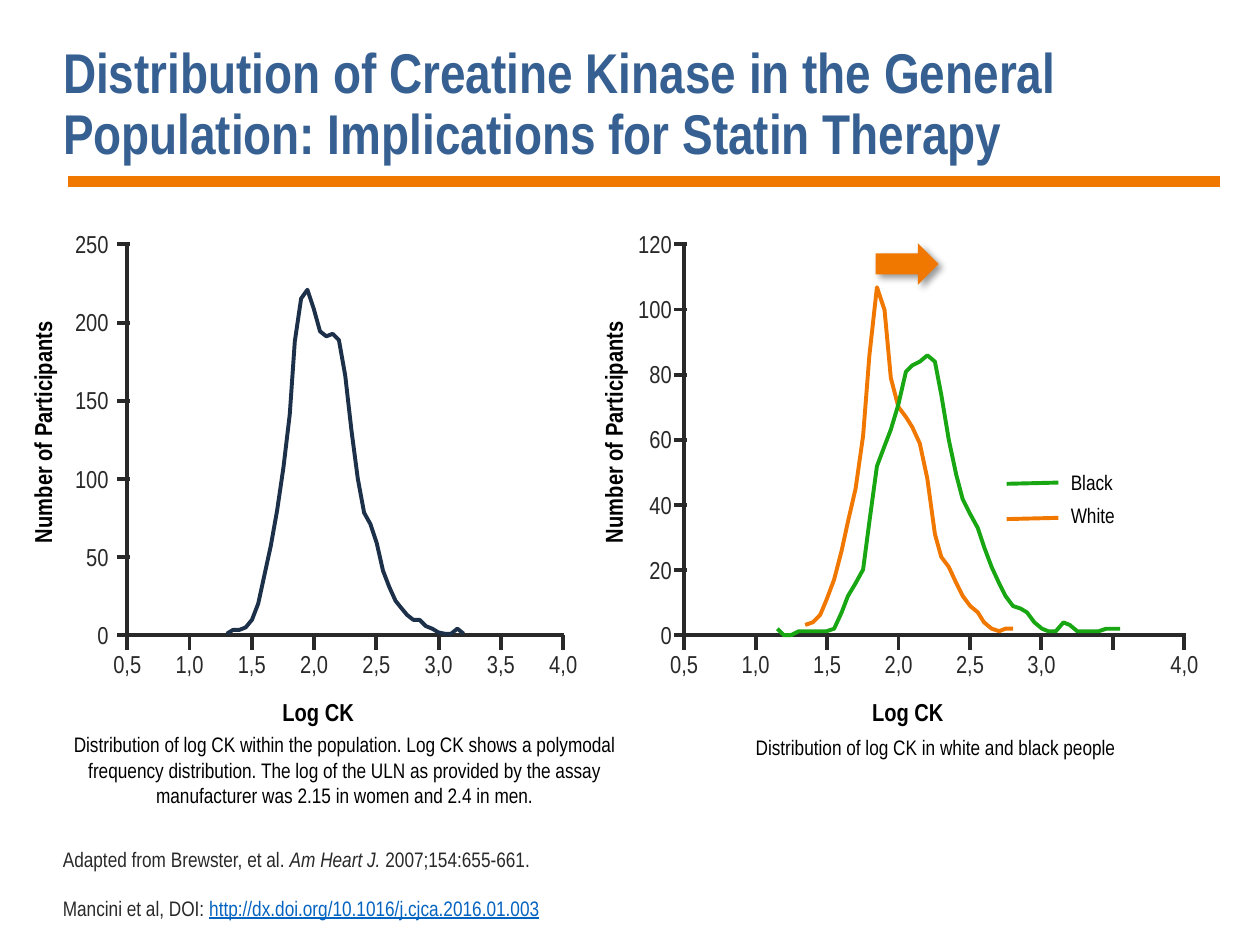
"""Builds a slide with creatine kinase distribution curves in two panels."""
from lxml import etree
from pptx import Presentation
from pptx.dml.color import RGBColor
from pptx.enum.shapes import MSO_CONNECTOR, MSO_SHAPE
from pptx.enum.text import MSO_ANCHOR, MSO_AUTO_SIZE, PP_ALIGN
from pptx.oxml.ns import qn
from pptx.util import Pt

STRAIGHT = MSO_CONNECTOR.STRAIGHT
RIGHT_ARROW = MSO_SHAPE.RIGHT_ARROW
BOTTOM = MSO_ANCHOR.BOTTOM
NO_FIT = MSO_AUTO_SIZE.NONE
LEFT, CENTER, RIGHT = PP_ALIGN.LEFT, PP_ALIGN.CENTER, PP_ALIGN.RIGHT
FONT = "Arial Narrow"
ORANGE = RGBColor(0xF1, 0x78, 0x00)
GREEN = RGBColor(0x18, 0xA7, 0x13)
NAVY = RGBColor(0x1C, 0x30, 0x49)
BLUE = RGBColor(0x37, 0x60, 0x92)
LINK = RGBColor(0x05, 0x63, 0xC1)
INK = RGBColor(0x28, 0x29, 0x28)
BLACK = RGBColor(0, 0, 0)

PX = 9144
AXIS_TOP, AXIS_BOTTOM = 194, 504
TICK_OUT, TICK_IN, TICK_DOWN = 8, 2, 12
LABEL_WIDTH, LABEL_HEIGHT = 59, 34
LOG_MIN, LOG_MAX, LOG_TICK = 0.5, 4.0, 0.5
LOG_SAMPLE = 0.05

prs = Presentation()
prs.slide_width, prs.slide_height = 1000 * PX, 750 * PX
slide = prs.slides.add_slide(prs.slide_layouts[5])
shapes = slide.shapes


def add_text(words, left, top, width, height, align=CENTER, size=14, color=BLACK, bold=False):
    box = shapes.add_textbox(*(int(length * PX) for length in (left, top, width, height)))
    box.text_frame.word_wrap = True
    paragraph = box.text_frame.paragraphs[0]
    paragraph.text = words
    paragraph.alignment = align
    font = paragraph.font
    font.name, font.size, font.bold = FONT, Pt(size), bold
    font.color.rgb = color
    return box


def add_line(x1, y1, x2, y2, color=INK, weight=2.25):
    ends = (int(length * PX) for length in (x1, y1, x2, y2))
    line = shapes.add_connector(STRAIGHT, *ends)
    line.line.color.rgb = color
    line.line.width = Pt(weight)
    etree.SubElement(line._element.spPr, qn("a:effectLst"))


title = shapes.title
title.left, title.top, title.width, title.height = 40 * PX, 40 * PX, 928 * PX, 97 * PX
title.text_frame.text = ("Distribution of Creatine Kinase in the General "
                         "Population: Implications for Statin Therapy")
title.text_frame.auto_size = NO_FIT
title.text_frame.vertical_anchor = BOTTOM
heading = title.text_frame.paragraphs[0]
heading.alignment = LEFT
heading.line_spacing = 0.9
heading.font.name, heading.font.size, heading.font.bold = FONT, Pt(32), True
heading.font.color.rgb = BLUE
add_line(54, 144, 968, 144, ORANGE, 6)

population = [1, 3, 3, 5, 10, 20, 39, 57, 80, 107, 141, 188, 215, 221, 209, 194, 191, 193, 189, 166,
              131, 100, 78, 71, 59, 41, 31, 22, 18, 13, 10, 10, 6, 4, 2, 1, 1, 4, 1]
white = [3, 4, 6, 11, 17, 26, 35, 45, 61, 86, 107, 100, 79, 70, 67, 64, 59, 48, 31, 24,
         21, 16, 12, 9, 7, 4, 2, 1, 2, 2]
black = [2, 0, 0, 1, 1, 1, 1, 1, 2, 7, 12, 16, 20, 35, 52, 58, 63, 71, 81, 83, 84, 86, 84, 74, 60,
         49, 42, 37, 33, 27, 21, 16, 12, 9, 8, 7, 4, 2, 1, 1, 4, 3, 1, 1, 1, 1, 2, 2, 2]

panels = [
    dict(axis_left=101, axis_right=447, count_max=250, count_tick=50, hidden_logs=[],
         count_label_left=37, name_left=-78, log_left=177,
         curves=[(1.3, population, NAVY)]),
    dict(axis_left=543, axis_right=940, count_max=120, count_tick=20, hidden_logs=[3.5],
         count_label_left=484, name_left=375, log_left=645,
         curves=[(1.35, white, ORANGE), (1.15, black, GREEN)]),
]
for panel in panels:
    axis_left, axis_right = panel["axis_left"], panel["axis_right"]
    log_scale = (axis_right - axis_left) / (LOG_MAX - LOG_MIN)
    count_scale = (AXIS_BOTTOM - AXIS_TOP) / panel["count_max"]
    add_line(axis_left, AXIS_TOP - 1, axis_left, AXIS_BOTTOM + 2)
    add_line(axis_left, AXIS_BOTTOM, axis_right + 1, AXIS_BOTTOM)

    for count in range(0, panel["count_max"] + 1, panel["count_tick"]):
        y = AXIS_BOTTOM - count * count_scale
        add_line(axis_left - TICK_OUT, y, axis_left + TICK_IN, y)
        add_text(str(count), panel["count_label_left"], y - LABEL_HEIGHT / 2,
                 LABEL_WIDTH, LABEL_HEIGHT, RIGHT, color=INK)

    for step in range(int((LOG_MAX - LOG_MIN) / LOG_TICK) + 1):
        log_ck = LOG_MIN + step * LOG_TICK
        x = axis_left + (log_ck - LOG_MIN) * log_scale
        add_line(x, AXIS_BOTTOM, x, AXIS_BOTTOM + TICK_DOWN)
        if log_ck not in panel["hidden_logs"]:
            add_text(f"{log_ck:.1f}".replace(".", ","), x - LABEL_WIDTH / 2, AXIS_BOTTOM + 6,
                     LABEL_WIDTH, LABEL_HEIGHT, color=INK)

    add_text("Log CK", panel["log_left"], 548, 151, LABEL_HEIGHT, bold=True)
    axis_name = add_text("Number of Participants", panel["name_left"], 326, 224, LABEL_HEIGHT,
                         bold=True)
    axis_name.rotation = 270

    for first_log, counts, color in panel["curves"]:
        points = [(axis_left + (first_log + i * LOG_SAMPLE - LOG_MIN) * log_scale,
                   AXIS_BOTTOM - count * count_scale) for i, count in enumerate(counts)]
        builder = shapes.build_freeform(*points[0], scale=PX)
        builder.add_line_segments(points[1:], close=False)
        curve = builder.convert_to_shape()
        curve.fill.background()
        curve.line.color.rgb = color
        curve.line.width = Pt(2.25)
        curve.shadow.inherit = False

shift = shapes.add_shape(RIGHT_ARROW, 695 * PX, 193 * PX, 50 * PX, 33 * PX)
shift.fill.solid()
shift.fill.fore_color.rgb = ORANGE
shift.line.fill.background()
shift.shadow.inherit = False
effects = shift._element.spPr.find(qn("a:effectLst"))
shadow = etree.SubElement(effects, qn("a:outerShdw"), blurRad=str(Pt(4)), dist=str(Pt(3)),
                          dir="2700000", algn="tl", rotWithShape="0")
shade = etree.SubElement(shadow, qn("a:srgbClr"), val="000000")
etree.SubElement(shade, qn("a:alpha"), val="40000")

for group, top, y, color in [("Black", 368, 384, GREEN), ("White", 394, 412, ORANGE)]:
    add_text(group, 840, top, 84, 30, LEFT, 12)
    add_line(799, y, 840, y - 1, color)

add_text("Distribution of log CK within the population. Log CK shows a polymodal frequency "
         "distribution. The log of the ULN as provided by the assay manufacturer was 2.15 in "
         "women and 2.4 in men.", 19, 576, 509, 71, size=12)
add_text("Distribution of log CK in white and black people", 508, 578, 469, 30, size=12)

sources = add_text("Adapted from Brewster, et al. ", 40, 696, 928, 40, LEFT, 12, INK).text_frame
sources.vertical_anchor = BOTTOM
citation = sources.paragraphs[0]
journal = citation.add_run()
journal.text = "Am Heart J. "
journal.font.italic = True
citation.add_run().text = "2007;154:655-661."
reference = sources.add_paragraph()
reference.space_before = Pt(14)
reference.font.name, reference.font.size = FONT, Pt(12)
reference.font.color.rgb = INK
reference.add_run().text = "Mancini et al, DOI: "
address = reference.add_run()
address.text = "http://dx.doi.org/10.1016/j.cjca.2016.01.003"
address.font.underline = True
address.font.color.rgb = LINK

prs.save("out.pptx")
